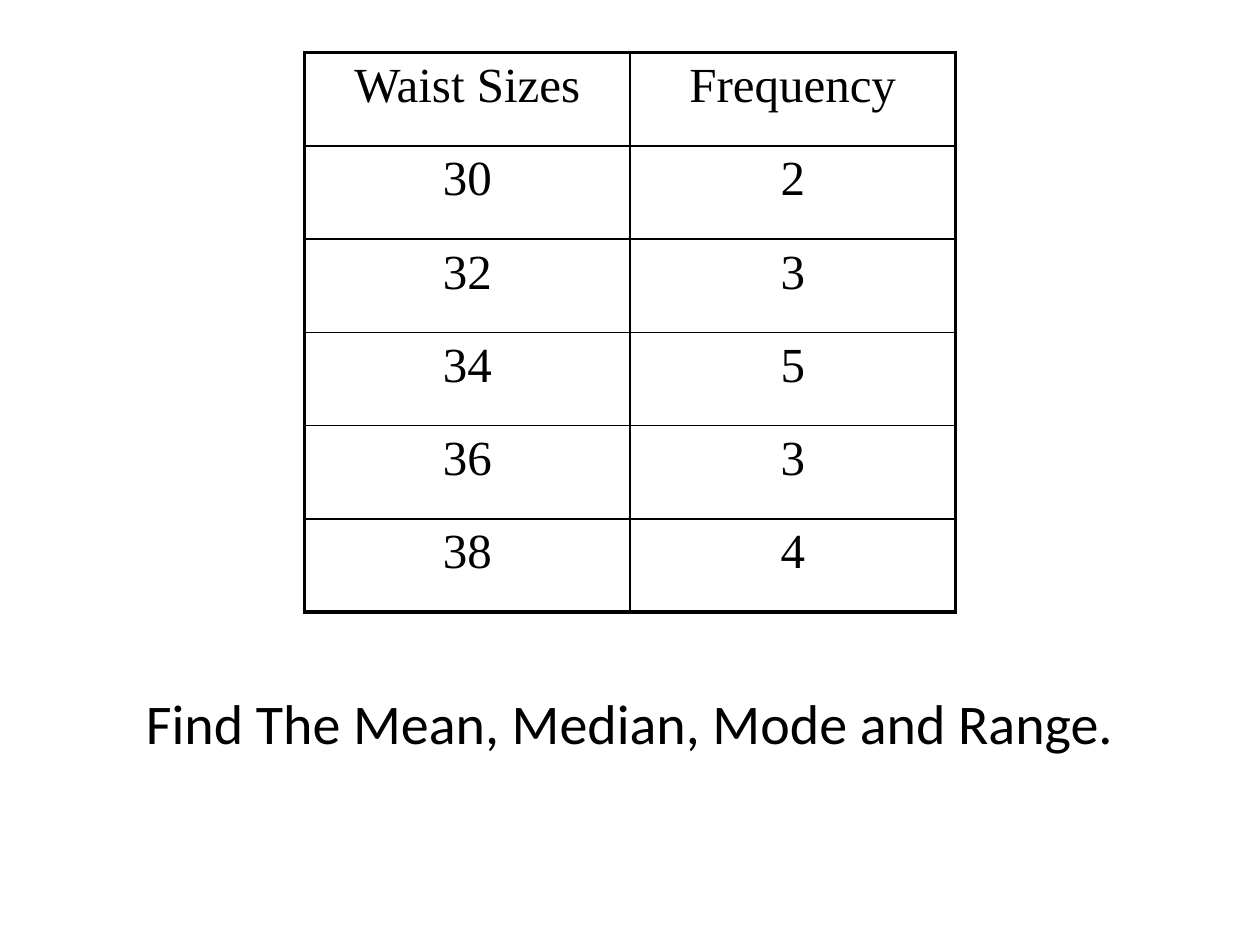
from lxml.etree import SubElement
from pptx import Presentation
from pptx.dml.color import RGBColor
from pptx.enum.text import MSO_AUTO_SIZE, PP_ALIGN
from pptx.oxml.ns import qn
from pptx.util import Cm, Pt

COLOURS = {"ink": "000000"}
OUTER_LINE, INNER_LINE = Pt(2.25), Pt(1)
FREQUENCIES = [
    ("Waist Sizes", "Frequency"),
    ("30", "2"),
    ("32", "3"),
    ("34", "5"),
    ("36", "3"),
    ("38", "4"),
]


class SlideBuilder:
    def __init__(self, page):
        self.page = page
        self.ink = COLOURS["ink"]

    def style(self, paragraph, font_name, size):
        paragraph.alignment = PP_ALIGN.CENTER
        paragraph.font.name = font_name
        paragraph.font.size = Pt(size)
        paragraph.font.color.rgb = RGBColor.from_string(self.ink)

    def border(self, cell, side, width):
        """Draw one cell border; sides must be added in the order L, R, T, B."""
        line = SubElement(cell._tc.get_or_add_tcPr(), qn(f"a:ln{side}"), w=str(width))
        fill = SubElement(line, qn("a:solidFill"))
        SubElement(fill, qn("a:srgbClr"), val=self.ink)

    def space_before(self, paragraph, percent):
        """Set spacing relative to the font size."""
        spacing = SubElement(paragraph._p.get_or_add_pPr(), qn("a:spcBef"))
        SubElement(spacing, qn("a:spcPct"), val=str(percent * 1000))

    def table(self, rows, left, top, column_width, row_height):
        row_count, column_count = len(rows), len(rows[0])
        table = self.page.shapes.add_table(
            row_count, column_count, left, top,
            column_width * column_count, row_height * row_count,
        ).table
        table.first_row = table.horz_banding = False
        for column in table.columns:
            column.width = column_width
        for r, texts in enumerate(rows):
            table.rows[r].height = row_height
            for c, text in enumerate(texts):
                cell = table.cell(r, c)
                cell.text = text
                paragraph = cell.text_frame.paragraphs[0]
                self.space_before(paragraph, 20)
                self.style(paragraph, "Times New Roman", 28)
                on_edge = {
                    "L": c == 0,
                    "R": c == column_count - 1,
                    "T": r == 0,
                    "B": r == row_count - 1,
                }
                for side, outer in on_edge.items():
                    self.border(cell, side, OUTER_LINE if outer else INNER_LINE)
                cell.fill.background()

    def text(self, words, left, top, width, height):
        frame = self.page.shapes.add_textbox(left, top, width, height).text_frame
        frame.word_wrap = True
        frame.auto_size = MSO_AUTO_SIZE.SHAPE_TO_FIT_TEXT
        frame.text = words
        self.style(frame.paragraphs[0], "Calibri", 32)


def main():
    deck = Presentation()
    deck.slide_width, deck.slide_height = Cm(25.4), Cm(19.05)
    builder = SlideBuilder(deck.slides.add_slide(deck.slide_layouts[6]))
    builder.table(FREQUENCIES, Cm(6.14), Cm(1.06), Cm(6.56), Cm(1.88))
    builder.text("Find The Mean, Median, Mode and Range.",
                 Cm(1.48), Cm(13.76), Cm(22.44), Cm(1.62))
    deck.save("out.pptx")


if __name__ == "__main__":
    main()
